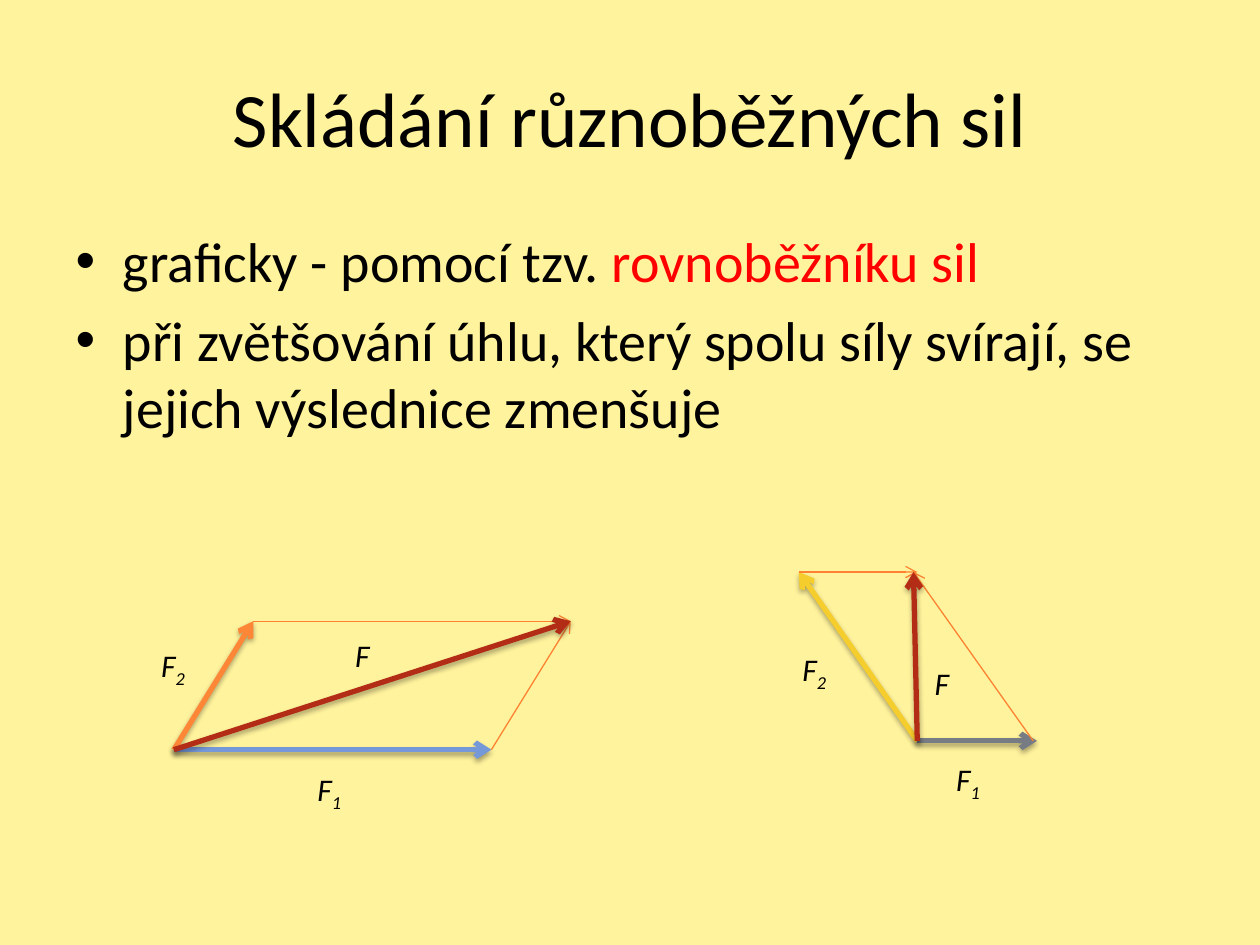
from dataclasses import dataclass

from lxml import etree
from pptx import Presentation
from pptx import util as u
from pptx.dml.color import RGBColor
from pptx.enum import shapes, text
from pptx.oxml.ns import qn

PX = 9144  # EMU per px, 100 px to the inch


@dataclass(frozen=True)
class Theme:
    font: str = "Calibri"
    background: str = "FFF39D"
    ink: str = "000000"
    highlight: str = "FF0000"
    blue: str = "7598D9"
    orange: str = "FE8637"
    gray: str = "777C84"
    yellow: str = "F5CD2D"
    resultant: str = "B32C16"
    side: str = "FD8231"
    title_size: int = 44
    body_size: int = 32
    label_size: int = 18
    force_width: float = 3
    side_width: float = 0.75


THEME = Theme()


def px(value):
    return u.Emu(value * PX)


def apply(target, values):
    for name, value in values.items():
        setattr(target, name, value)


def place(shape, box):
    apply(shape, dict(zip(("left", "top", "width", "height"), map(px, box))))


def add_run(paragraph, words, size, color=THEME.ink, italic=None):
    run = paragraph.add_run()
    run.text = words
    apply(run.font, {"name": THEME.font, "size": u.Pt(size), "italic": italic})
    run.font.color.rgb = RGBColor.from_string(color)
    return run


def add_title(slide, box, words):
    title = slide.shapes.title
    place(title, box)
    title.text_frame.vertical_anchor = text.MSO_ANCHOR.MIDDLE
    paragraph = title.text_frame.paragraphs[0]
    paragraph.alignment = text.PP_ALIGN.CENTER
    add_run(paragraph, words, THEME.title_size)


def add_bullets(slide, box, items):
    body = slide.placeholders[1]
    place(body, box)
    frame = body.text_frame
    for index, item in enumerate(items):
        paragraph = frame.add_paragraph() if index else frame.paragraphs[0]
        for words, color in item:
            add_run(paragraph, words, THEME.body_size, color)


def add_arrow(slide, start, end, color, width, shadow=False):
    arrow = slide.shapes.add_connector(
        shapes.MSO_CONNECTOR.STRAIGHT, *map(px, (*start, *end)))
    arrow.line.color.rgb = RGBColor.from_string(color)
    arrow.line.width = u.Pt(width)
    etree.SubElement(arrow.line._get_or_add_ln(), qn("a:tailEnd"), type="arrow")
    effects = etree.SubElement(arrow._element.spPr, qn("a:effectLst"))
    if shadow:
        outer = etree.SubElement(
            effects, qn("a:outerShdw"), blurRad=str(u.Pt(3.1)),
            dist=str(u.Pt(1.8)), dir="5400000", rotWithShape="0")
        shade = etree.SubElement(outer, qn("a:srgbClr"), val=THEME.ink)
        etree.SubElement(shade, qn("a:alpha"), val="35000")


def add_label(slide, position, subscript):
    width = 40 if subscript else 32
    label = slide.shapes.add_textbox(*map(px, (*position, width, 40)))
    apply(label.text_frame, {"word_wrap": False,
                             "auto_size": text.MSO_AUTO_SIZE.SHAPE_TO_FIT_TEXT})
    paragraph = label.text_frame.paragraphs[0]
    add_run(paragraph, "F", THEME.label_size, italic=True)
    if subscript:
        run = add_run(paragraph, subscript, THEME.label_size, italic=True)
        run.font._element.set("baseline", "-25000")


def add_parallelogram(slide, corner, origin, forces, sides, resultant, labels):
    """Draw a force parallelogram; all points are relative to the corner."""
    def at(point):
        return corner[0] + point[0], corner[1] + point[1]

    def force(tip, color):
        add_arrow(slide, at(origin), at(tip), color, THEME.force_width, True)

    # Component forces, construction sides, then the resultant on top
    for tip, color in forces:
        force(tip, color)
    for start, end in sides:
        add_arrow(slide, at(start), at(end), THEME.side, THEME.side_width)
    force(resultant, THEME.resultant)
    for subscript, position in labels.items():
        add_label(slide, at(position), subscript)


def main():
    presentation = Presentation()
    apply(presentation, {"slide_width": px(1000), "slide_height": px(750)})
    slide = presentation.slides.add_slide(presentation.slide_layouts[1])
    fill = slide.background.fill
    fill.solid()
    fill.fore_color.rgb = RGBColor.from_string(THEME.background)

    add_title(slide, (50, 30, 900, 125), "Skládání různoběžných sil")
    add_bullets(slide, (50, 175, 900, 495), [
        [("graficky - pomocí tzv. ", THEME.ink),
         ("rovnoběžníku sil", THEME.highlight)],
        [("při zvětšování úhlu, který spolu síly svírají, se jejich "
          "výslednice zmenšuje", THEME.ink)],
    ])

    # Acute angle: long resultant
    add_parallelogram(
        slide, (138, 493), origin=(0, 102),
        forces=[((252, 102), THEME.blue), ((63, 0), THEME.orange)],
        sides=[((63, 0), (315, 0)), ((252, 102), (315, 0))],
        resultant=(315, 0),
        labels={"1": (104, 113), "2": (-20, 15), "": (134, 7)})

    # Obtuse angle: short resultant
    add_parallelogram(
        slide, (634, 454), origin=(94, 134),
        forces=[((189, 134), THEME.gray), ((0, 0), THEME.yellow)],
        sides=[((0, 0), (94, 0)), ((186, 134), (91, 0))],
        resultant=(91, 0),
        labels={"1": (115, 144), "2": (-7, 57), "": (98, 68)})

    presentation.save("out.pptx")


if __name__ == "__main__":
    main()
